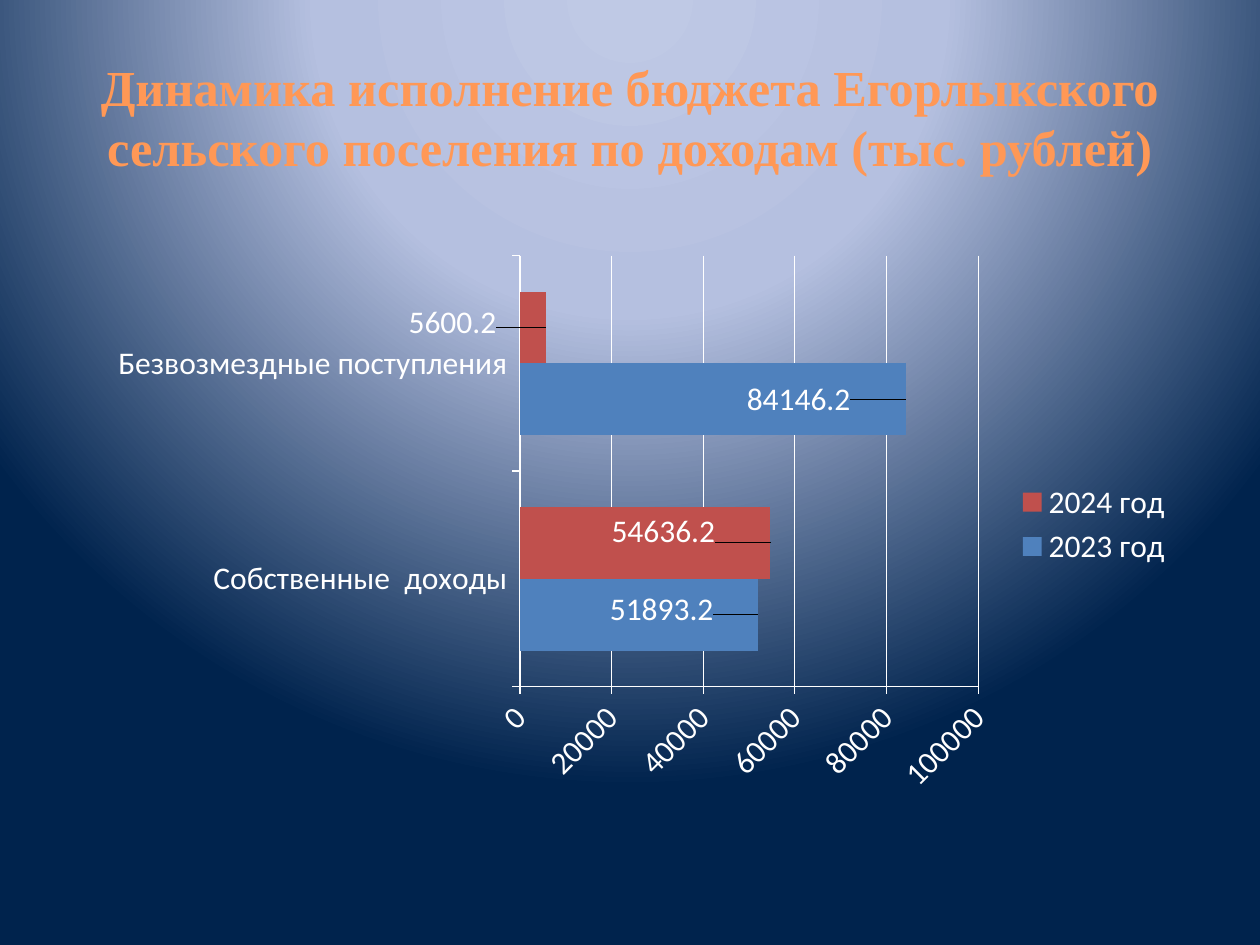
from dataclasses import dataclass

from pptx import Presentation
from pptx.chart.data import CategoryChartData
from pptx.dml.color import RGBColor
from pptx.enum.chart import XL_CHART_TYPE, XL_LABEL_POSITION, XL_LEGEND_POSITION, XL_TICK_MARK
from pptx.enum.text import MSO_ANCHOR, PP_ALIGN
from pptx.oxml import parse_xml
from pptx.oxml.ns import nsdecls
from pptx.util import Cm, Pt

BAR_CLUSTERED = XL_CHART_TYPE.BAR_CLUSTERED
OUTSIDE_END = XL_LABEL_POSITION.OUTSIDE_END
LEGEND_RIGHT = XL_LEGEND_POSITION.RIGHT
TICK_OUTSIDE = XL_TICK_MARK.OUTSIDE
CENTER = PP_ALIGN.CENTER
MIDDLE = MSO_ANCHOR.MIDDLE

WHITE = RGBColor(0xFF, 0xFF, 0xFF)
ORANGE = RGBColor(0xFF, 0x98, 0x56)
BLUE = RGBColor(0x4F, 0x81, 0xBD)
RED = RGBColor(0xC0, 0x50, 0x4D)
GLOW = RGBColor(0xBF, 0xC9, 0xE5)
HAZE = RGBColor(0xB5, 0xC0, 0xE0)
NAVY = RGBColor(0x00, 0x23, 0x4D)

CATEGORIES = ("Собственные  доходы", "Безвозмездные поступления")


@dataclass(frozen=True)
class YearIncome:
    """Income of one year; label shifts are fractions of the chart size."""
    name: str
    values: tuple[float, ...]
    color: RGBColor
    label_shifts: tuple[tuple[float, float], ...]


YEARS = (
    YearIncome("2023 год", (51893.2, 84146.2), BLUE, ((-0.14, -0.01), (-0.15, 0))),
    YearIncome("2024 год", (54636.2, 5600.2), RED, ((-0.15, -0.02), (-0.13, -0.01))),
)


def paint_background(slide) -> None:
    """Fill the slide with a circular gradient centred above its top edge."""
    stops = "".join(
        f'<a:gs pos="{percent * 1000}"><a:srgbClr val="{color}"/></a:gs>'
        for percent, color in ((0, GLOW), (40, HAZE), (100, NAVY))
    )
    background = parse_xml(
        f'<p:bg {nsdecls("p", "a")}><p:bgPr><a:gradFill rotWithShape="1">'
        f'<a:gsLst>{stops}</a:gsLst><a:path path="circle">'
        '<a:fillToRect l="50000" t="-80000" r="50000" b="180000"/></a:path>'
        '</a:gradFill><a:effectLst/></p:bgPr></p:bg>'
    )
    slide.element.cSld.insert(0, background)


def add_text(slide, text: str, *, left, top, width, height, size: float,
             font: str, color: RGBColor, bold: bool = False) -> None:
    frame = slide.shapes.add_textbox(left, top, width, height).text_frame
    frame.word_wrap = True
    frame.vertical_anchor = MIDDLE
    paragraph = frame.paragraphs[0]
    paragraph.alignment = CENTER
    run = paragraph.add_run()
    run.text = text
    run.font.size = Pt(size)
    run.font.name = font
    run.font.bold = bold
    run.font.color.rgb = color


def manual_layout(**parts):
    """Return a chart layout element made of the given parts, in order."""
    body = "".join(f'<c:{part} val="{value}"/>' for part, value in parts.items())
    return parse_xml(
        f'<c:layout {nsdecls("c")}><c:manualLayout>{body}</c:manualLayout></c:layout>'
    )


def style_axis(axis) -> None:
    axis.major_tick_mark = TICK_OUTSIDE
    axis.format.line.color.rgb = WHITE
    axis.format.line.width = Pt(0.75)


def style_series(series, year: YearIncome) -> None:
    series.format.fill.solid()
    series.format.fill.fore_color.rgb = year.color
    series.data_labels.show_value = True
    for index, _ in enumerate(year.values):
        series.points[index].data_label.position = OUTSIDE_END


def add_income_chart(slide) -> None:
    data = CategoryChartData()
    data.categories = CATEGORIES
    for year in YEARS:
        data.add_series(year.name, year.values)
    chart = slide.shapes.add_chart(
        BAR_CLUSTERED, Cm(1.9), Cm(4.93), Cm(22), Cm(11.28), data
    ).chart
    chart.has_title = False
    chart.font.size = Pt(18)
    chart.font.name = "Calibri"
    chart.font.color.rgb = WHITE

    chart.has_legend = True
    chart.legend.position = LEGEND_RIGHT
    chart.legend.include_in_layout = False

    style_axis(chart.category_axis)
    incomes = chart.value_axis
    style_axis(incomes)
    incomes.minimum_scale = 0
    incomes.maximum_scale = 100000
    incomes.major_unit = 20000
    incomes.has_major_gridlines = True
    incomes.major_gridlines.format.line.color.rgb = WHITE
    incomes.major_gridlines.format.line.width = Pt(0.75)
    incomes.tick_labels.font.size = Pt(18)
    incomes.tick_labels.font.color.rgb = WHITE

    plot = chart.plots[0]
    plot.gap_width = 100
    plot.vary_by_categories = False
    for series, year in zip(plot.series, YEARS):
        style_series(series, year)

    root = chart.element
    root.xpath(".//c:valAx/c:txPr/a:bodyPr")[0].set("rot", "-2700000")
    shifts = [shift for year in YEARS for shift in year.label_shifts]
    for label, (x, y) in zip(root.xpath(".//c:dLbl"), shifts):
        label.xpath("c:idx")[0].addnext(manual_layout(x=x, y=y))
    plot_area = root.xpath(".//c:plotArea")[0]
    for layout in plot_area.xpath("c:layout"):
        plot_area.remove(layout)
    plot_area.insert(0, manual_layout(
        layoutTarget="inner", xMode="edge", yMode="edge", x=0.39, y=0.02, w=0.42, h=0.77
    ))


def main() -> None:
    presentation = Presentation()
    presentation.slide_width = Cm(25.4)
    presentation.slide_height = Cm(19.05)
    slide = presentation.slides.add_slide(presentation.slide_layouts[6])
    paint_background(slide)
    add_text(
        slide,
        "Динамика исполнение бюджета Егорлыкского сельского поселения по доходам (тыс. рублей)",
        left=Cm(1.27), top=Cm(0.76), width=Cm(22.86), height=Cm(3.18),
        size=28.8, font="Times New Roman", color=ORANGE, bold=True,
    )
    add_income_chart(slide)
    presentation.save("out.pptx")


if __name__ == "__main__":
    main()
